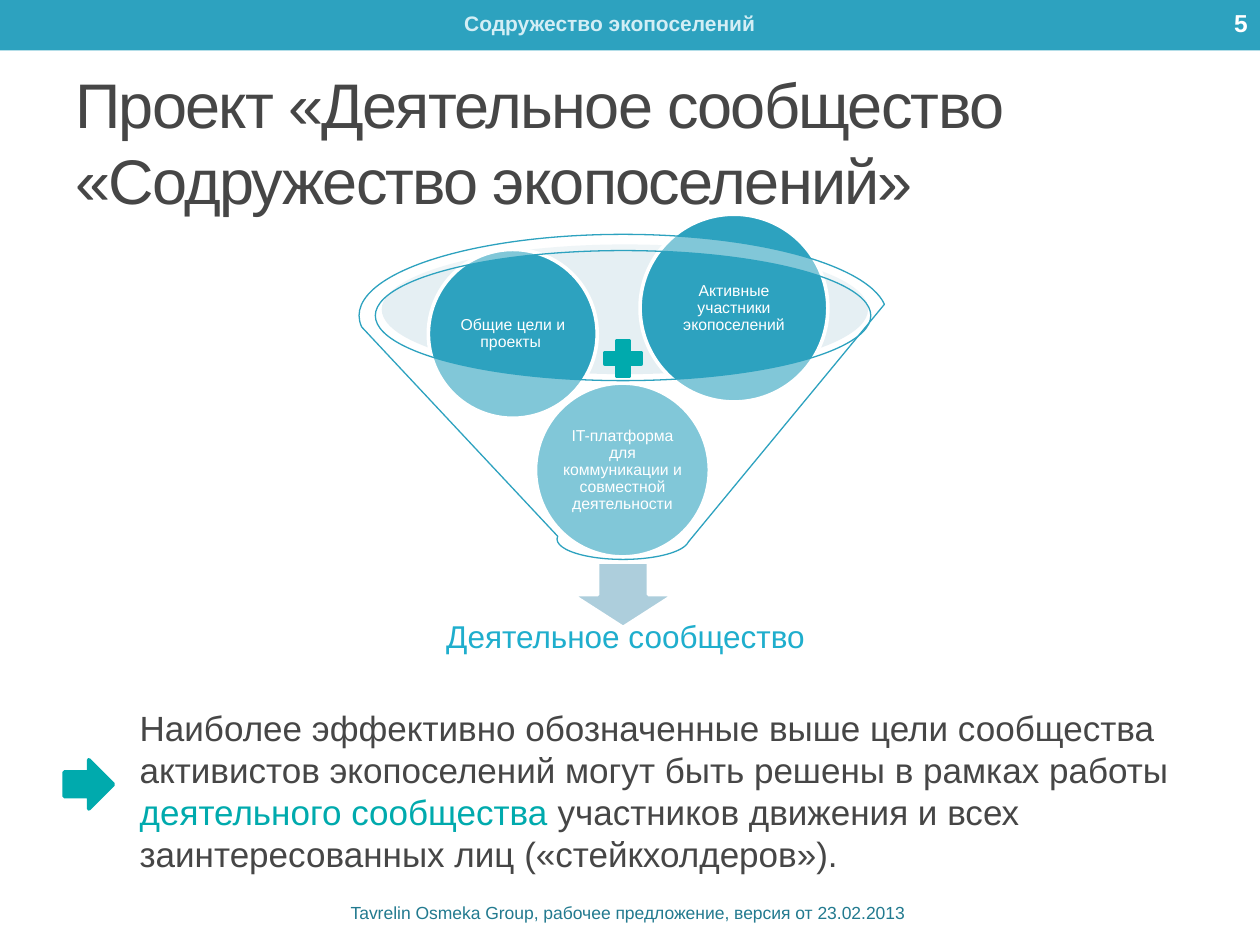
from lxml.etree import SubElement
from pptx import Presentation
from pptx.dml.color import RGBColor
from pptx.enum.shapes import MSO_SHAPE
from pptx.enum.text import MSO_ANCHOR, PP_ALIGN
from pptx.oxml.ns import qn
from pptx.util import Inches, Pt

WIDTH, HEIGHT = 10, 7.5
MARGIN = WIDTH * 0.05
FONT = "Arial"
WHITE = RGBColor(0xFF, 0xFF, 0xFF)
BLUE = RGBColor(0x2D, 0xA2, 0xBF)
BRIGHT_BLUE = RGBColor(0x1F, 0xAE, 0xCD)
DARK_BLUE = RGBColor(0x22, 0x7A, 0x8F)
PALE_BLUE = RGBColor(0xD3, 0xEE, 0xF5)
MIST = RGBColor(0xBE, 0xD7, 0xE2)
ARROW_GREY = RGBColor(0xAD, 0xCE, 0xDC)
TEAL = RGBColor(0x00, 0xAA, 0xAD)
DARK_GREY = RGBColor(0x46, 0x46, 0x46)

# Left, top and diameter of each ball in the funnel, with its label
BALLS = [
    (4.25, 3.04, 1.38, "IT-платформа для коммуникации и совместной деятельности"),
    (3.4, 1.98, 1.34, "Общие цели и проекты "),
    (5.08, 1.7, 1.49, "Активные участники экопоселений"),
]


def add_figure(slide, kind, box, fill, line=None, line_width=2.08, opacity=None):
    shape = slide.shapes.add_shape(kind, *map(Inches, box))
    shape.shadow.inherit = False
    shape.fill.solid()
    shape.fill.fore_color.rgb = fill
    if opacity is not None:
        color = shape.fill._xPr.find(qn("a:solidFill"))[0]
        SubElement(color, qn("a:alpha"), val=str(opacity * 1000))
    if line is None:
        shape.line.fill.background()
    else:
        shape.line.color.rgb = line
        shape.line.width = Pt(line_width)
    return shape


def add_text(slide, box, *runs, size, align=PP_ALIGN.LEFT, anchor=MSO_ANCHOR.MIDDLE,
             bold=False, inset=None, line_spacing=None, indent=0, tracking=0):
    """Add one paragraph made of (text, color) runs."""
    frame = slide.shapes.add_textbox(*map(Inches, box)).text_frame
    frame.word_wrap = True
    frame.vertical_anchor = anchor
    if inset is not None:
        frame.margin_left = frame.margin_right = Inches(inset)
        frame.margin_top = frame.margin_bottom = Inches(inset)
    paragraph = frame.paragraphs[0]
    paragraph.alignment = align
    if line_spacing:
        paragraph.line_spacing = line_spacing
    if indent:
        properties = paragraph._p.get_or_add_pPr()
        properties.set("marL", str(Inches(indent)))
        properties.set("indent", "0")
    for text, color in runs:
        run = paragraph.add_run()
        run.text = text
        run.font.name = FONT
        run.font.size = Pt(size)
        run.font.bold = bold
        run.font.color.rgb = color
        if tracking:
            run.font._element.set("spc", str(tracking * 100))


def add_header(slide):
    add_figure(slide, MSO_SHAPE.RECTANGLE, (0, 0, WIDTH, 0.4), BLUE)
    add_text(slide, (2.32, 0, 5.04, 0.37), ("Содружество экопоселений", PALE_BLUE),
             size=12, bold=True, align=PP_ALIGN.CENTER)
    add_text(slide, (9.25, 0, 0.75, 0.36), ("5", WHITE),
             size=14, bold=True, align=PP_ALIGN.RIGHT)
    add_text(slide, (MARGIN, 0.58, WIDTH - 2 * MARGIN, 1.08),
             ("Проект «Деятельное сообщество «Содружество экопоселений»", DARK_GREY),
             size=36, tracking=-1)


def add_ball(slide, left, top, diameter, label):
    add_figure(slide, MSO_SHAPE.OVAL, (left, top, diameter, diameter), BLUE, WHITE)
    side = diameter * 0.71
    gap = (diameter - side) / 2
    add_text(slide, (left + gap, top + gap, side, side), (label, WHITE), size=9,
             align=PP_ALIGN.CENTER, inset=0.01, line_spacing=0.9)


def add_funnel(slide):
    add_figure(slide, MSO_SHAPE.OVAL, (3.03, 1.94, 3.86, 1.03), MIST, opacity=40)
    add_figure(slide, MSO_SHAPE.DOWN_ARROW, (4.54, 4.46, 0.81, 0.52), ARROW_GREY, WHITE)
    add_text(slide, (2.91, 4.78, 4.11, 0.57), ("Деятельное сообщество", BRIGHT_BLUE),
             size=18, align=PP_ALIGN.CENTER, inset=0.14, line_spacing=0.9)
    for ball in BALLS:
        add_ball(slide, *ball)
    add_figure(slide, MSO_SHAPE.FUNNEL, (2.85, 1.86, 4.19, 2.58), WHITE, BLUE,
               line_width=0.75, opacity=40)
    add_figure(slide, MSO_SHAPE.MATH_PLUS, (4.75, 2.65, 0.39, 0.39), TEAL, TEAL)


def add_conclusion(slide):
    add_text(slide, (0.51, 5.56, 9.21, 1.45),
             ("Наиболее эффективно обозначенные выше цели сообщества активистов "
              "экопоселений могут быть решены в рамках работы ", DARK_GREY),
             ("деятельного сообщества ", TEAL),
             ("участников движения и всех заинтересованных лиц («стейкхолдеров»).",
              DARK_GREY),
             size=20, anchor=MSO_ANCHOR.TOP, indent=0.5)
    add_figure(slide, MSO_SHAPE.RIGHT_ARROW, (0.51, 6.03, 0.39, 0.39), TEAL, TEAL)


def add_footer(slide):
    add_text(slide, (MARGIN, 7.06, WIDTH - 2 * MARGIN, 0.36),
             ("Tavrelin Osmeka Group, рабочее предложение, версия от 23.02.2013 ",
              DARK_BLUE), size=10, align=PP_ALIGN.CENTER)


def main():
    presentation = Presentation()
    presentation.slide_width = Inches(WIDTH)
    presentation.slide_height = Inches(HEIGHT)
    slide = presentation.slides.add_slide(presentation.slide_layouts[6])
    add_header(slide)
    add_funnel(slide)
    add_conclusion(slide)
    add_footer(slide)
    presentation.save("out.pptx")


if __name__ == "__main__":
    main()
